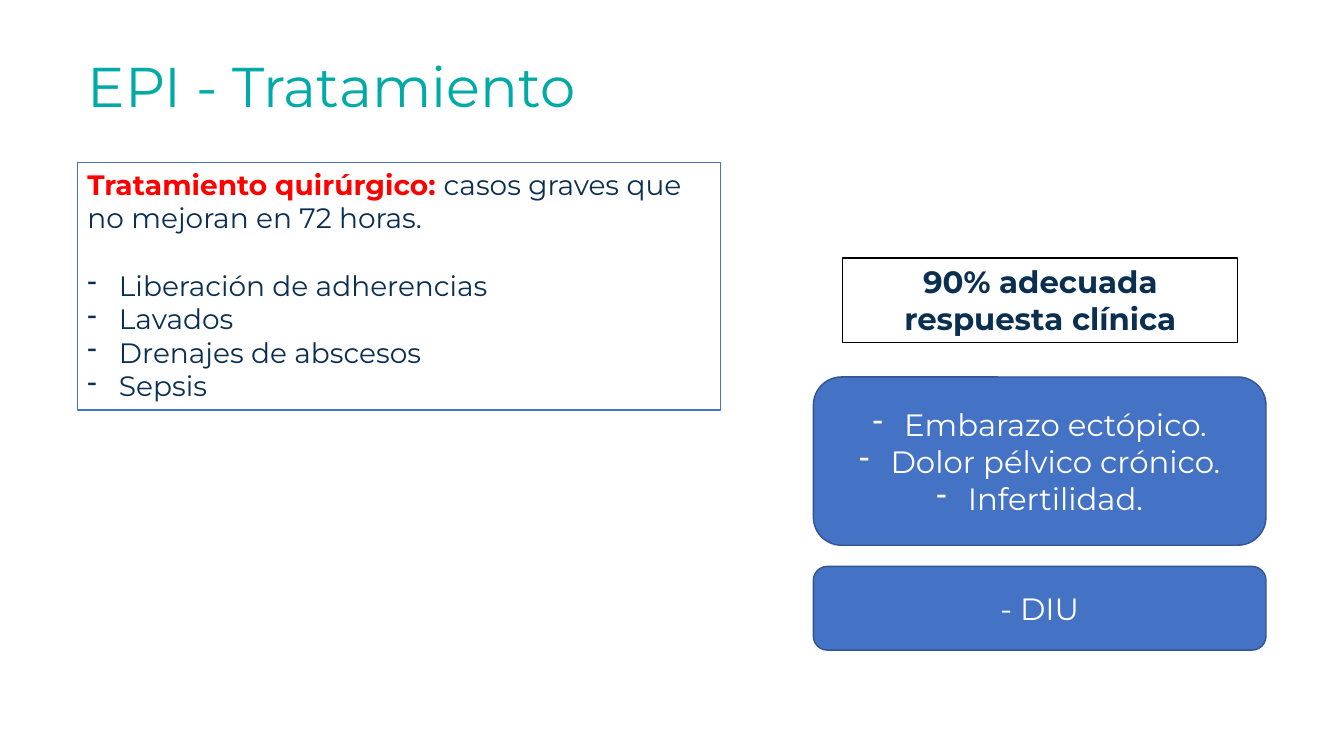
from lxml.etree import SubElement
from pptx import Presentation
from pptx.dml.color import RGBColor
from pptx.enum.shapes import MSO_SHAPE
from pptx.enum.text import MSO_ANCHOR, PP_ALIGN
from pptx.oxml.ns import qn
from pptx.util import Pt

FONT = "Montserrat"
HEX = {
    "white": "FFFFFF",
    "black": "000000",
    "blue": "4472C4",
    "edge": "325491",
    "navy": "0B2F51",
    "red": "FF0000",
    "teal": "00AAA7",
}
INDENT = Pt(22.5)


def color(name):
    return RGBColor.from_string(HEX[name])


def add_run(para, text, size, tint, bold=False):
    run = para.add_run()
    run.text = text
    run.font.name = FONT
    run.font.size = Pt(size)
    run.font.bold = bold
    run.font.color.rgb = color(tint)


def add_dash(para):
    props = para._p.get_or_add_pPr()
    props.set("marL", str(INDENT))
    props.set("indent", str(-INDENT))
    SubElement(props, qn("a:buChar")).set("char", "-")


def add_list(frame, items, size, tint, align, fresh=True):
    """Write dashed lines; fresh starts in the empty first paragraph."""
    for i, item in enumerate(items):
        para = frame.paragraphs[0] if fresh and i == 0 else frame.add_paragraph()
        add_dash(para)
        para.alignment = align
        add_run(para, item, size, tint)


def add_panel(slide, kind, area, fill, line, anchor):
    shape = slide.shapes.add_shape(kind, *map(Pt, area))
    shape.shadow.inherit = False
    shape.fill.solid()
    shape.fill.fore_color.rgb = color(fill)
    shape.line.color.rgb = color(line)
    shape.line.width = Pt(1)
    frame = shape.text_frame
    frame.word_wrap = True
    frame.vertical_anchor = anchor
    return frame


def add_title(slide, text):
    box = slide.shapes.add_textbox(Pt(37.4), Pt(-8.6), Pt(398.9), Pt(145.4))
    frame = box.text_frame
    frame.word_wrap = True
    frame.vertical_anchor = MSO_ANCHOR.MIDDLE
    para = frame.paragraphs[0]
    para.alignment = PP_ALIGN.CENTER
    para.line_spacing = 0.9
    add_run(para, text, 40, "teal")


def main():
    deck = Presentation()
    deck.slide_width, deck.slide_height = Pt(960), Pt(540)
    slide = deck.slides.add_slide(deck.slide_layouts[6])

    # Surgical treatment
    frame = add_panel(slide, MSO_SHAPE.RECTANGLE, (55.4, 115.9, 459.4, 177.1),
                      "white", "blue", MSO_ANCHOR.TOP)
    intro = frame.paragraphs[0]
    intro.alignment = PP_ALIGN.LEFT
    intro.space_after = Pt(24)
    add_run(intro, "Tratamiento quirúrgico: ", 20, "red", True)
    add_run(intro, "casos graves que no mejoran en 72 horas.", 20, "navy")
    steps = ["Liberación de adherencias", "Lavados",
             "Drenajes de abscesos", "Sepsis"]
    add_list(frame, steps, 20, "navy", PP_ALIGN.LEFT, fresh=False)

    # Response rate
    frame = add_panel(slide, MSO_SHAPE.RECTANGLE, (602, 184.3, 282.2, 60.5),
                      "white", "black", MSO_ANCHOR.TOP)
    frame.paragraphs[0].alignment = PP_ALIGN.CENTER
    add_run(frame.paragraphs[0], "90% adecuada respuesta clínica", 22, "navy", True)

    # Sequelae
    frame = add_panel(slide, MSO_SHAPE.ROUNDED_RECTANGLE, (581, 269.3, 323.3, 120.2),
                      "blue", "edge", MSO_ANCHOR.MIDDLE)
    risks = ["Embarazo ectópico.", "Dolor pélvico crónico.", "Infertilidad."]
    add_list(frame, risks, 22, "white", PP_ALIGN.CENTER)

    # Device
    frame = add_panel(slide, MSO_SHAPE.ROUNDED_RECTANGLE, (581, 404.6, 323.3, 59.8),
                      "blue", "edge", MSO_ANCHOR.MIDDLE)
    frame.paragraphs[0].alignment = PP_ALIGN.CENTER
    add_run(frame.paragraphs[0], "- DIU", 22, "white")

    add_title(slide, "EPI - Tratamiento")
    deck.save("out.pptx")


if __name__ == "__main__":
    main()
